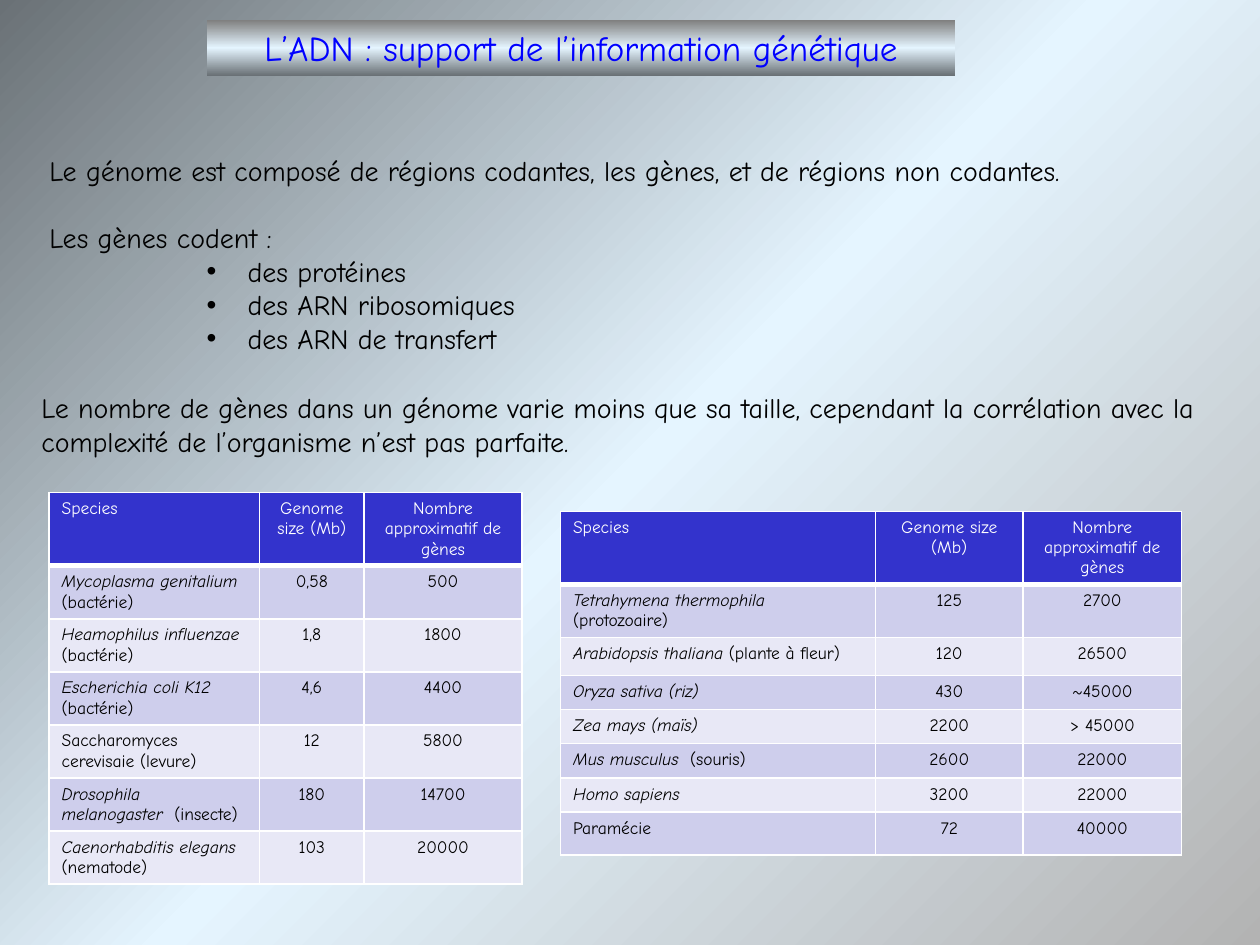
from lxml import etree
from pptx import Presentation
from pptx import util as u
from pptx.dml.color import RGBColor
from pptx.enum import text
from pptx.oxml import parse_xml
from pptx.oxml.ns import nsdecls, qn

FONT = "Comic Neue"
COLORS = {
    "title": "0000FF", "text": "000000", "white": "FFFFFF", "header": "3333CC",
    "band_dark": "CECEEC", "band_light": "E8E8F6",
    "grey": "B3B3B3", "mid_grey": "808080", "pale_blue": "E5F5FF", "slate": "6A7176",
}


def write(para, words, size=16, color="text", italic=False, align=None):
    span = para.add_run()
    span.text = words
    span.font.name = FONT
    span.font.size = u.Pt(size)
    span.font.italic = italic
    span.font.color.rgb = RGBColor.from_string(COLORS[color])
    if align is not None:
        para.alignment = align


def use_gradient(parent, names, direction):
    """Replace the solid fill inside parent by evenly spaced stops."""
    stops = "".join(
        f'<a:gs pos="{i * 50000}"><a:srgbClr val="{COLORS[name]}"/></a:gs>'
        for i, name in enumerate(names))
    fill = parse_xml(f'<a:gradFill rotWithShape="1" {nsdecls("a")}>'
                     f"<a:gsLst>{stops}</a:gsLst>{direction}</a:gradFill>")
    parent.replace(parent.find(qn("a:solidFill")), fill)


deck = Presentation()
deck.slide_width, deck.slide_height = u.Cm(25.4), u.Cm(19.05)
page = deck.slides.add_slide(deck.slide_layouts.get_by_name("Two Content"))

# Background
page.background.fill.solid()
use_gradient(
    page.element.find(".//" + qn("p:bgPr")), ["grey", "pale_blue", "slate"],
    '<a:path path="circle"><a:fillToRect l="100000" t="100000"/></a:path>')

# Title, outline and remark share the placeholder set-up
title, outline, remark = page.placeholders
places = [
    (title, 4.17, 0.41, 15.09, 1.11),
    (outline, 0.74, 2.97, 22.43, 4.37),
    (remark, 0.58, 7.75, 24.21, 1.63),
]
for box, left, top, width, height in places:
    box.left, box.top = u.Cm(left), u.Cm(top)
    box.width, box.height = u.Cm(width), u.Cm(height)
    box.text_frame.word_wrap = True
    box.text_frame.auto_size = text.MSO_AUTO_SIZE.NONE

title.fill.solid()
use_gradient(title.element.spPr, ["mid_grey", "pale_blue", "slate"],
             '<a:lin ang="5400000" scaled="1"/>')
write(title.text_frame.paragraphs[0], "L’ADN : support de l’information génétique",
      size=20, color="title", align=text.PP_ALIGN.CENTER)

# Body text: box, words, space before in points, bulleted
lines = [
    (outline, "Le génome est composé de régions codantes, les gènes, "
              "et de régions non codantes.", 0, False),
    (outline, "Les gènes codent :", 19.2, False),
    (outline, " des protéines", 0, True),
    (outline, " des ARN ribosomiques", 0, True),
    (outline, " des ARN de transfert", 0, True),
    (remark, "Le nombre de gènes dans un génome varie moins que sa taille, cependant "
             "la corrélation avec la complexité de l’organisme n’est pas parfaite.", 0, False),
]
for box, words, gap, bulleted in lines:
    frame = box.text_frame
    para = frame.paragraphs[0] if not frame.text else frame.add_paragraph()
    write(para, words)
    para.space_before = u.Pt(gap)
    para.level = 3 if bulleted else 0
    props = para._p.get_or_add_pPr()
    props.set("marL", str(u.Cm(3.81) if bulleted else 0))
    props.set("indent", str(u.Cm(-0.64) if bulleted else 0))
    if bulleted:
        etree.SubElement(props, qn("a:buChar"), char="•")
    else:
        etree.SubElement(props, qn("a:buNone"))

# Tables: species in italic, rest of the name upright, genome size, gene count
HEADINGS = ("", "Species", "Genome size (Mb)", "Nombre approximatif de gènes")
small_genomes = [
    ("Mycoplasma genitalium ", "(bactérie)", "0,58", "500"),
    ("Heamophilus influenzae ", "(bactérie)", "1,8", "1800"),
    ("Escherichia coli K12 ", "(bactérie)", "4,6", "4400"),
    ("", "Saccharomyces cerevisaie (levure)", "12", "5800"),
    ("Drosophila melanogaster  ", "(insecte)", "180", "14700"),
    ("Caenorhabditis elegans ", " (nematode)", "103", "20000"),
]
large_genomes = [
    ("Tetrahymena thermophila", "  (protozoaire)", "125", "2700"),
    ("Arabidopsis thaliana ", "(plante à fleur)", "120", "26500"),
    ("Oryza sativa (riz)", "", "430", "~45000"),
    ("Zea mays (maïs)", "", "2200", "> 45000"),
    ("Mus musculus  ", "(souris)", "2600", "22000"),
    ("Homo sapiens", "", "3200", "22000"),
    ("", "Paramécie", "72", "40000"),
]
tables = [
    (0.99, 9.93, [4.24, 2.11, 3.18], [1.12] + [0.76] * 6, small_genomes),
    (11.3, 10.31, [6.35, 2.97, 3.2], [1.12] + [0.76] * 2 + [0.69] * 4 + [0.86],
     large_genomes),
]
for left, top, widths, heights, species in tables:
    grid = page.shapes.add_table(
        len(heights), len(widths), u.Cm(left), u.Cm(top),
        u.Cm(sum(widths)), u.Cm(sum(heights))).table
    for column, width in zip(grid.columns, widths):
        column.width = u.Cm(width)
    for r, (italic_name, plain_name, *values) in enumerate([HEADINGS] + species):
        grid.rows[r].height = u.Cm(heights[r])
        is_header = r == 0
        ink = "white" if is_header else "text"
        band = "header" if is_header else ("band_dark" if r % 2 else "band_light")
        for c, cell in enumerate(grid.rows[r].cells):
            para = cell.text_frame.paragraphs[0]
            if c == 0:
                for words, italic in ((italic_name, True), (plain_name, False)):
                    if words:
                        write(para, words, size=10, color=ink, italic=italic)
            else:
                write(para, values[c - 1], size=10, color=ink,
                      align=text.PP_ALIGN.CENTER)
            props = cell._tc.get_or_add_tcPr()
            for side in "LRTB":
                if side == "T" and r == 1:
                    continue  # the header's thick lower border serves here
                weight = 3 if is_header and side == "B" else 1
                edge = etree.SubElement(props, qn(f"a:ln{side}"), w=str(u.Pt(weight)))
                paint = etree.SubElement(edge, qn("a:solidFill"))
                etree.SubElement(paint, qn("a:srgbClr"), val=COLORS["white"])
            cell.fill.solid()
            cell.fill.fore_color.rgb = RGBColor.from_string(COLORS[band])

deck.save("out.pptx")
